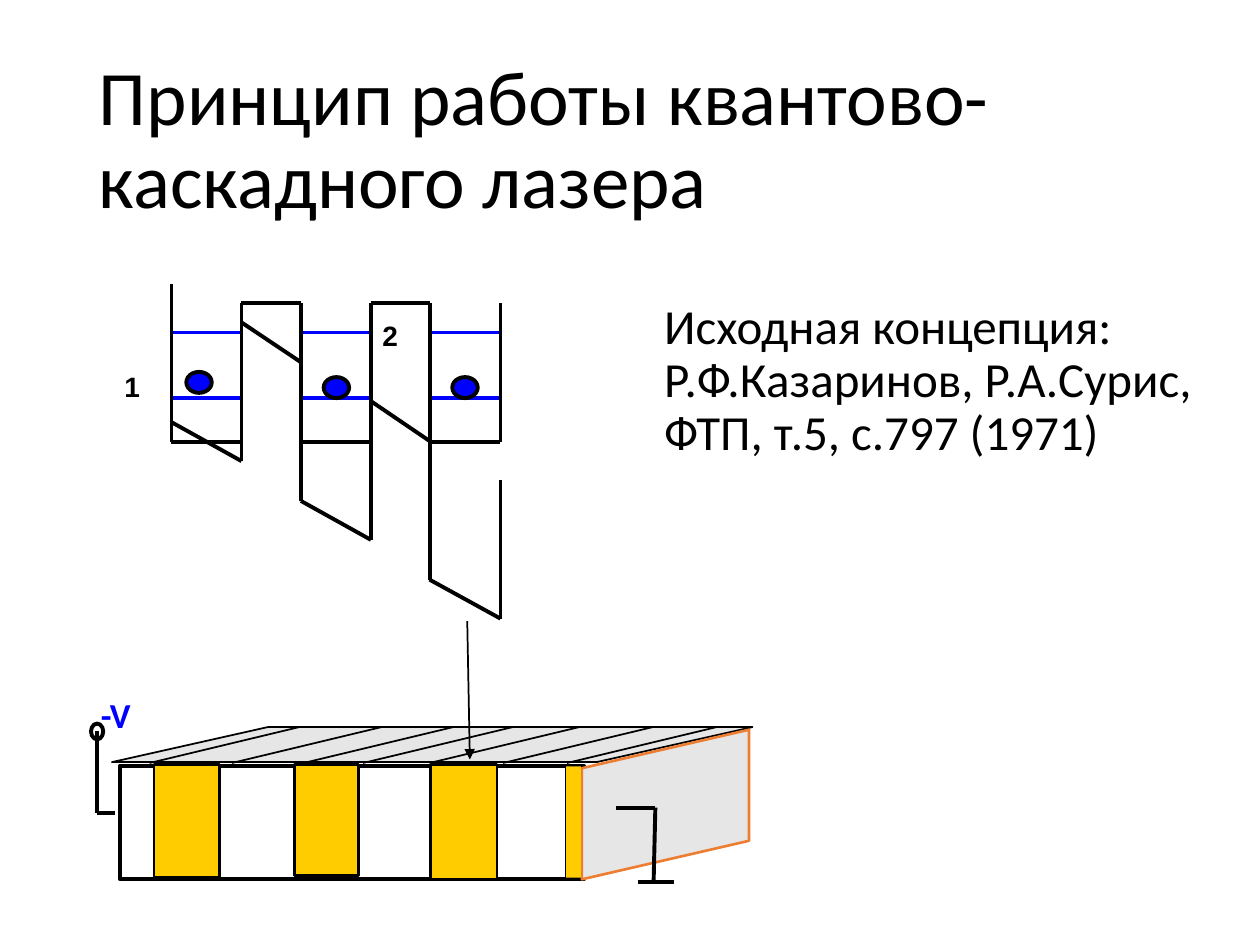
"""Build a slide on the principle of the quantum cascade laser."""
from itertools import pairwise

from lxml import etree
from pptx import Presentation
from pptx.dml.color import RGBColor
from pptx.enum import shapes, text
from pptx.oxml import ns
from pptx.util import Pt

BLACK, BLUE, GREY, ORANGE, YELLOW = "000000", "0000FF", "E7E6E6", "ED7D31", "FFCC00"
KINDS = shapes.MSO_SHAPE

TITLE = "Принцип работы квантово-каскадного лазера"
REFERENCE = "Исходная концепция: Р.Ф.Казаринов, Р.А.Сурис, ФТП, т.5, с.797 (1971)"

WELLS = [(98, 138), (172, 212), (245.5, 286)]
BAND_TOP, BAND_BOTTOM = 173, 252.5
LEVELS = [227.5, 190]
ELECTRONS = [(106.5, 212.5), (185, 215.5), (258.5, 215.5)]
TILT_START, TILT_DEPTH = 162, 79.25
TILT_DROPS = [22.25, 22.75]

STRIPES = [(88, 37.5, 64.5), (168.5, 36.5, 63.5), (246, 38, 65.5)]
HATCHES = [85.5, 132.5, 173.5, 207.5, 245.5, 287.5, 324]
SIDE = [(332.5, 439), (428, 417), (428, 480.5), (332.5, 502.5)]
CONTACT = [(66, 464.5), (55.5, 464.5), (55.5, 417.5)]
GROUND = [(352, 461.5), (374.5, 461.5), (373.5, 504)]
GROUND_BAR = [(364.5, 504), (385, 504)]
POINTER = [(267, 355), (268.5, 434)]

prs = Presentation()
prs.slide_width, prs.slide_height = Pt(720), Pt(540)
s = prs.slides.add_slide(prs.slide_layouts[6])


def rgb(value):
    """Turn a hex string into a colour."""
    return RGBColor.from_string(value)


def add_text(content, at, size, font="Calibri", color=BLACK, bold=False,
             spacing=None, anchor=text.MSO_ANCHOR.TOP):
    """Add a wrapped text box with one paragraph."""
    tf = s.shapes.add_textbox(*map(Pt, at)).text_frame
    tf.word_wrap, tf.vertical_anchor = True, anchor
    p = tf.paragraphs[0]
    p.line_spacing = spacing
    r = p.add_run()
    r.text = content
    r.font.name, r.font.size, r.font.bold = font, Pt(size), bold
    r.font.color.rgb = rgb(color)


def paint(sp, fill, line, width):
    """Set the fill and outline of a shape, None meaning without."""
    sp.shadow.inherit = False
    if fill:
        sp.fill.solid()
        sp.fill.fore_color.rgb = rgb(fill)
    else:
        sp.fill.background()
    if line:
        sp.line.color.rgb, sp.line.width = rgb(line), Pt(width)
    else:
        sp.line.fill.background()


def add_shape(kind, at, fill=None, line=BLACK, width=2.25):
    """Add a painted preset shape."""
    sp = s.shapes.add_shape(kind, *map(Pt, at))
    paint(sp, fill, line, width)
    return sp


def add_lines(points, color=BLACK, width=2.25, arrow=False):
    """Join consecutive points with straight connectors."""
    for start, end in pairwise(points):
        line = s.shapes.add_connector(shapes.MSO_CONNECTOR.STRAIGHT, *map(Pt, start + end))
        line.line.color.rgb, line.line.width = rgb(color), Pt(width)
        props = line._element.spPr
        if arrow:
            etree.SubElement(props.find(ns.qn("a:ln")), ns.qn("a:tailEnd"), type="triangle")
        etree.SubElement(props, ns.qn("a:effectLst"))


def add_device():
    """Draw the layered laser bar with its contacts."""
    add_shape(KINDS.RECTANGLE, (68.5, 437.5, 265, 65))
    top = add_shape(KINDS.PARALLELOGRAM, (64, 415.5, 366, 20), GREY, width=1)
    top.adjustments[0] = 4.45
    builder = s.shapes.build_freeform(*map(Pt, SIDE[0]), scale=1.0)
    builder.add_line_segments([(Pt(x), Pt(y)) for x, y in SIDE[1:]], close=True)
    paint(builder.convert_to_shape(), GREY, ORANGE, 1.5)
    for x in HATCHES:
        add_lines([(x, 436), (x + 85.5, 415.5)], width=1)
    for x, w, h in STRIPES:
        add_shape(KINDS.RECTANGLE, (x, 437, w, h), YELLOW, width=1.5)
    add_shape(KINDS.RECTANGLE, (284, 437, 39, 65.5), width=0.25)
    add_shape(KINDS.RECTANGLE, (323.5, 438, 8.5, 63.5), YELLOW, None)
    add_text("-V", (50.5, 392.5, 36, 31), 20, color=BLUE, bold=True)
    for points in (CONTACT, GROUND, GROUND_BAR):
        add_lines(points)
    add_lines(POINTER, width=1, arrow=True)
    add_shape(KINDS.OVAL, (52, 413.5, 7, 9))


def add_bands():
    """Draw the flat and the tilted band profile with levels and electrons."""
    flat, tilted, y = [], [], TILT_START
    for (left, right), (ex, ey) in zip(WELLS, ELECTRONS):
        for level in LEVELS:
            add_lines([(left, level), (right + 1, level)], BLUE)
        add_shape(KINDS.OVAL, (ex, ey, 14.5, 12), BLUE)
        flat += [(left, BAND_TOP), (left, BAND_BOTTOM), (right, BAND_BOTTOM), (right, BAND_TOP)]
        bottom = y + TILT_DEPTH
        y += TILT_DROPS[0]
        tilted += [(left, bottom - TILT_DEPTH), (left, bottom),
                   (right, y + TILT_DEPTH), (right, y)]
        y += TILT_DROPS[1]
    add_lines(flat)
    add_lines(tilted)
    add_text("2", (211.5, 178.5, 28, 26.5), 16, font="Arial", bold=True)
    add_text("1", (64, 207.5, 22.5, 26.5), 16, font="Arial", bold=True)


add_text(TITLE, (49.5, 29, 621, 104.5), 44, spacing=0.9, anchor=text.MSO_ANCHOR.MIDDLE)
add_device()
add_bands()
add_text(REFERENCE, (372.5, 169, 338.5, 106), 28, spacing=0.9)
prs.save("out.pptx")
